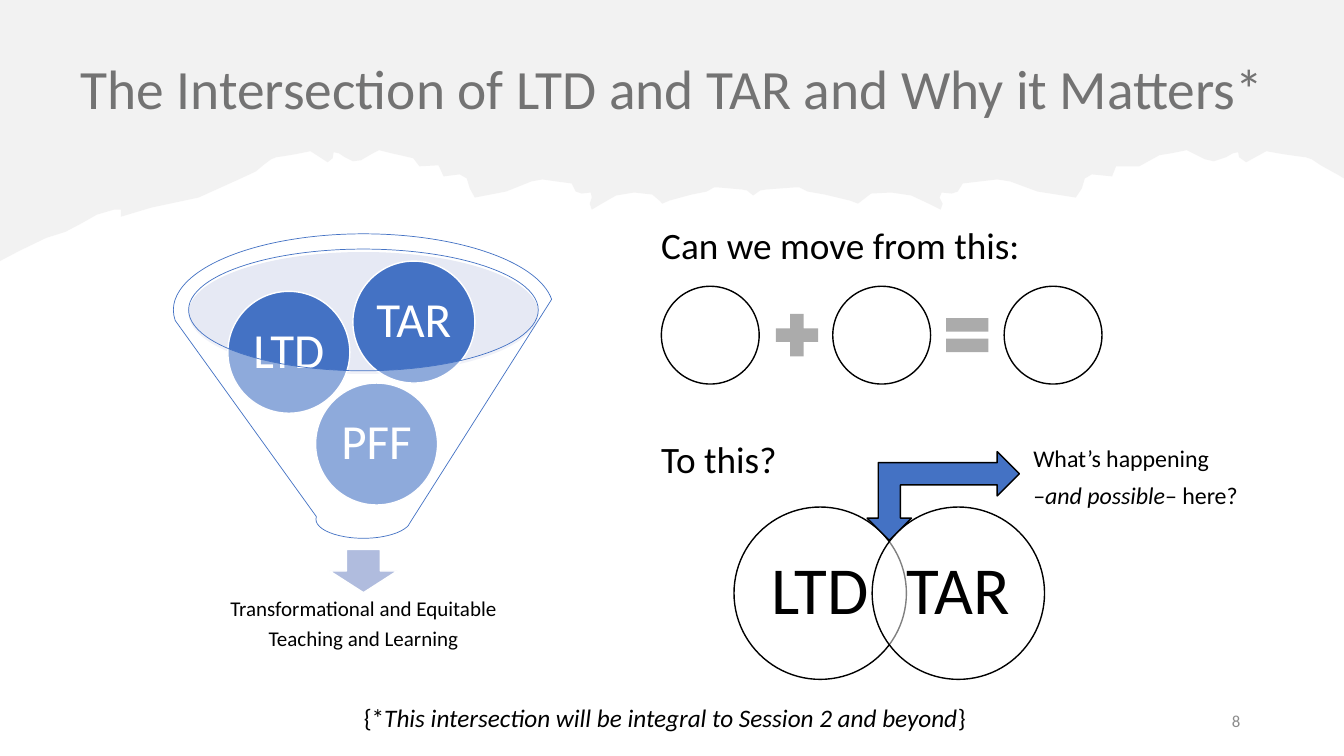
"""Builds the slide on the intersection of LTD and TAR."""
from lxml import etree
from pptx import Presentation
from pptx.dml.color import RGBColor
from pptx.enum.shapes import MSO_SHAPE as Preset
from pptx.enum.text import MSO_ANCHOR as Anchor, PP_ALIGN as Align
from pptx.oxml.ns import qn
from pptx.util import Pt

PX = 9144
FONT = "Calibri"
COLORS = {
    "black": "000000", "white": "FFFFFF", "blue": "4472C4", "torn": "E7E6E6",
    "mouth": "C1C9E4", "arrow": "B0BCDE", "sign": "ABABAB", "number": "8C8C8C",
}
TORN_EDGE = [
    (0, 259), (19, 249), (46, 236), (65, 230), (82, 221), (96, 213), (113, 208),
    (120, 208), (120, 215), (150, 206), (197, 196), (239, 177), (254, 170),
    (261, 164), (269, 158), (274, 156), (281, 155), (293, 153), (308, 150),
    (325, 161), (330, 157), (331, 151), (336, 152), (342, 156), (350, 160),
    (358, 159), (370, 152), (376, 149), (388, 152), (397, 154), (410, 157),
    (416, 165), (435, 164), (440, 175), (456, 173), (463, 177), (466, 187),
    (471, 196), (502, 190), (527, 180), (538, 178), (552, 180), (567, 182),
    (571, 190), (577, 192), (586, 191), (587, 196), (585, 202), (587, 208),
    (597, 202), (611, 194), (629, 191), (647, 193), (654, 199), (657, 202),
    (664, 199), (686, 193), (701, 190), (708, 186), (713, 186), (736, 188),
    (741, 189), (747, 194), (754, 189), (760, 188), (787, 186), (793, 186),
    (801, 190), (818, 193), (843, 199), (851, 202), (855, 199), (864, 192),
    (884, 191), (904, 194), (921, 202), (933, 208), (935, 202), (932, 196),
    (934, 191), (944, 192), (950, 190), (955, 182), (989, 178), (1002, 180),
    (1029, 190), (1067, 196), (1073, 187), (1076, 177), (1083, 173), (1103, 175),
    (1107, 165), (1130, 165), (1150, 154), (1162, 152), (1177, 149), (1183, 152),
    (1195, 158), (1204, 160), (1216, 156), (1223, 152), (1228, 151), (1229, 156),
    (1236, 161), (1256, 150), (1273, 153), (1287, 155), (1295, 156), (1301, 158),
    (1310, 164), (1328, 174), (1333, 177), (1333, 0), (0, 0),
]


def px(*lengths):
    """Turns pixel lengths into EMU."""
    return [length * PX for length in lengths]


def rgb(name):
    """Looks up a named colour."""
    return RGBColor.from_string(COLORS[name])


def paint(shape, fill, opacity=100, line=None, width=1):
    """Sets the fill, outline and lack of shadow of a shape."""
    shape.shadow.inherit = False
    shape.fill.solid()
    shape.fill.fore_color.rgb = rgb(fill)
    if opacity < 100:
        color = shape.fill._xPr.find(".//" + qn("a:srgbClr"))
        etree.SubElement(color, qn("a:alpha"), val=str(opacity * 1000))
    if line:
        shape.line.color.rgb = rgb(line)
        shape.line.width = Pt(width)
    else:
        shape.line.fill.background()


def write(frame, paragraphs, size, color="black", align=Align.LEFT,
          line_spacing=1.0, after=0):
    """Fills a frame with paragraphs of (text, italic) runs."""
    for index, runs in enumerate(paragraphs):
        paragraph = frame.paragraphs[0] if index == 0 else frame.add_paragraph()
        paragraph.alignment = align
        paragraph.line_spacing = line_spacing
        paragraph.space_before = Pt(0)
        paragraph.space_after = Pt(after)
        font = paragraph.font
        font.name, font.size, font.color.rgb = FONT, Pt(size), rgb(color)
        for text, italic in runs:
            run = paragraph.add_run()
            run.text = text
            if italic:
                run.font.italic = True


def add_preset(slide, preset, box, fill, **style):
    """Adds a painted preset shape."""
    shape = slide.shapes.add_shape(preset, *px(*box))
    paint(shape, fill, **style)
    return shape


def add_circle(slide, left, top, diameter, fill, line, label=None, size=35,
               color="white", opacity=100):
    """Adds a circle with an optional label in its middle."""
    circle = add_preset(slide, Preset.OVAL, (left, top, diameter, diameter),
                        fill, line=line, opacity=opacity)
    if label:
        frame = circle.text_frame
        frame.word_wrap = False
        frame.vertical_anchor = Anchor.MIDDLE
        write(frame, [[(label, False)]], size, color, Align.CENTER, 0.9)


def add_text(slide, box, paragraphs, size, anchor=Anchor.TOP, wrap=True, **style):
    """Adds a text box."""
    frame = slide.shapes.add_textbox(*px(*box)).text_frame
    frame.word_wrap = wrap
    frame.vertical_anchor = anchor
    write(frame, paragraphs, size, **style)
    return frame


def add_background(slide):
    """Adds the torn paper edge across the top."""
    builder = slide.shapes.build_freeform(*TORN_EDGE[0], scale=PX)
    builder.add_line_segments(TORN_EDGE[1:], close=True)
    paint(builder.convert_to_shape(), "torn", opacity=50)


def add_title(slide):
    """Places and formats the title placeholder."""
    title = slide.shapes.title
    title.left, title.top, title.width, title.height = px(70, 40, 1198, 102)
    title.text_frame.vertical_anchor = Anchor.MIDDLE
    heading = "The Intersection of LTD and TAR and Why it Matters*"
    write(title.text_frame, [[(heading, False)]], 39.6, line_spacing=0.9)


def add_funnel(slide):
    """Adds the funnel with its three circles and the outcome below."""
    add_preset(slide, Preset.OVAL, (187, 250, 347, 121), "mouth", opacity=40)
    add_preset(slide, Preset.DOWN_ARROW, (327, 545, 67, 43), "arrow", line="white")
    outcome = ["Transformational and Equitable", "Teaching and Learning"]
    add_text(slide, (199, 579, 323, 81), [[(text, False)] for text in outcome], 15,
             Anchor.MIDDLE, align=Align.CENTER, line_spacing=0.9, after=5.25)
    for label, left, top in [("PFF", 313, 380), ("LTD", 226, 289), ("TAR", 350, 259)]:
        add_circle(slide, left, top, 121, "blue", "white", label)
    add_preset(slide, Preset.FUNNEL, (172, 232, 377, 302), "white",
               opacity=40, line="blue", width=0.5)


def add_equation(slide):
    """Adds three empty circles joined by a plus and an equals sign."""
    for column in range(3):
        add_circle(slide, 656 + 170 * column, 284, 97, "white", "black")
    for column, sign in enumerate([Preset.MATH_PLUS, Preset.MATH_EQUAL]):
        add_preset(slide, sign, (762 + 169 * column, 304, 57, 57), "sign")


def add_overlap(slide):
    """Adds the two overlapping circles and the arrow to their overlap."""
    for column, label in enumerate(["LTD", "TAR"]):
        add_circle(slide, 728 + 137 * column, 503, 171, "white", "black", label,
                   size=48, color="black", opacity=50)
    arrow = add_preset(slide, Preset.LEFT_UP_ARROW, (860, 448, 151, 88), "blue",
                       line="black")
    arrow.rotation = 180
    question = [[("What’s happening", False)],
                [("–", False), ("and possible", True), ("– here?", False)]]
    add_text(slide, (1015, 435, 225, 76), question, 17.1, wrap=False, after=6)


def main():
    """Builds and saves the slide."""
    presentation = Presentation()
    presentation.slide_width, presentation.slide_height = px(1333, 750)
    slide = presentation.slides.add_slide(presentation.slide_layouts[5])
    add_background(slide)
    add_title(slide)
    add_funnel(slide)
    prompts = add_text(slide, (646, 221, 539, 452),
                       [[("Can we move from this:", False)], [("To this?", False)]],
                       26.6, line_spacing=0.9)
    prompts.paragraphs[1].space_before = Pt(124)
    add_equation(slide)
    add_overlap(slide)
    add_text(slide, (940, 695, 300, 40), [[("8", False)]], 12, Anchor.MIDDLE,
             color="number", align=Align.RIGHT)
    footnote = "This intersection will be integral to Session 2 and beyond"
    add_text(slide, (351, 692, 624, 40),
             [[("{*", False), (footnote, True), ("}", False)]], 18, wrap=False)
    presentation.save("out.pptx")


if __name__ == "__main__":
    main()
